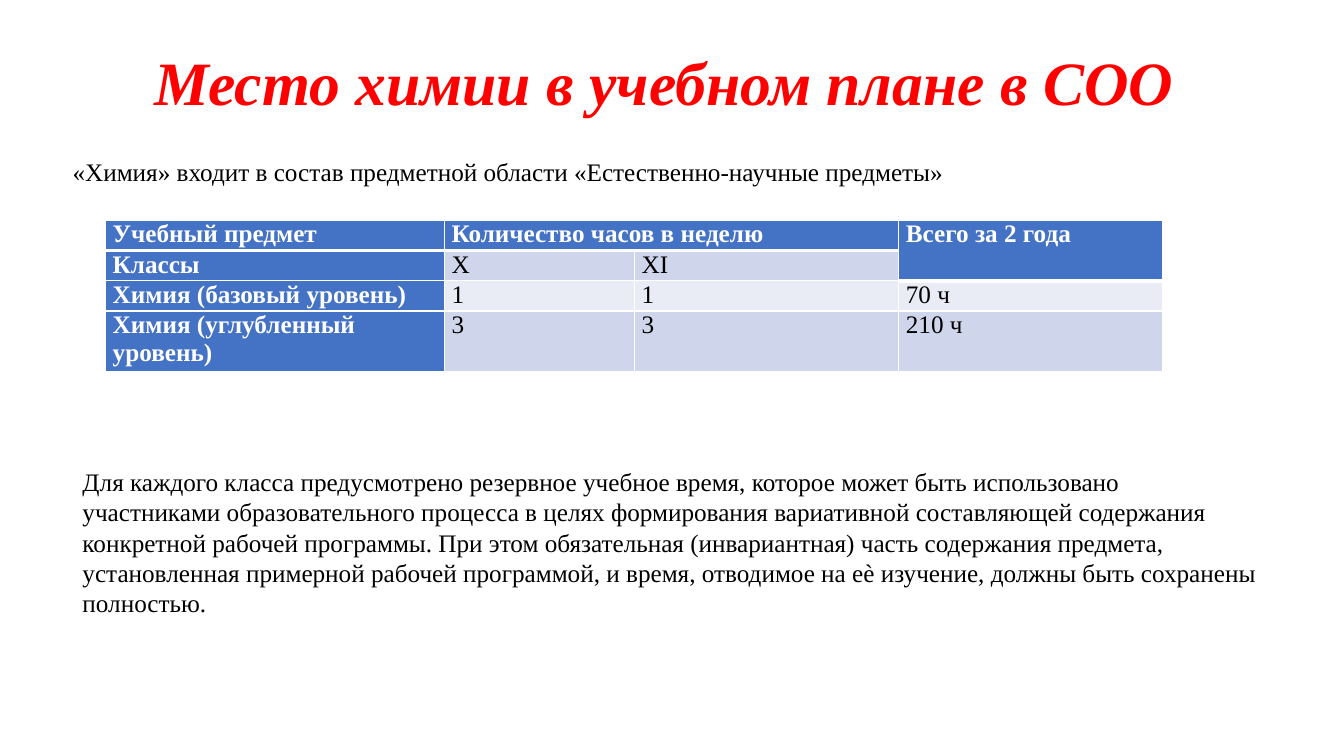
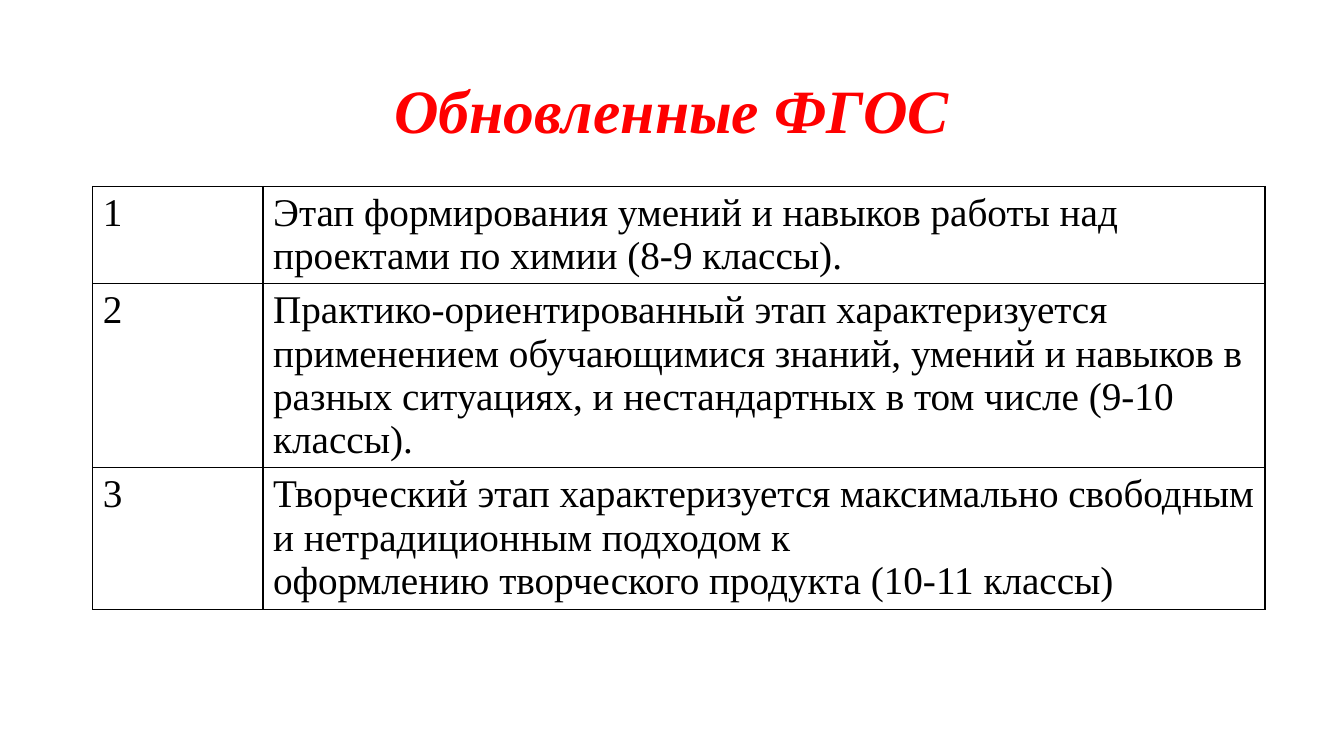
from lxml.etree import SubElement
from pptx import Presentation
from pptx.dml.color import RGBColor
from pptx.enum.text import MSO_ANCHOR, MSO_AUTO_SIZE, PP_ALIGN
from pptx.oxml.ns import qn
from pptx.util import Cm, Pt

RED = RGBColor(0xFF, 0x00, 0x00)
BLACK = RGBColor(0x00, 0x00, 0x00)
WHITE = RGBColor(0xFF, 0xFF, 0xFF)
BLUE = RGBColor(0x44, 0x72, 0xC4)
BANDS = [RGBColor(0xE9, 0xEB, 0xF5), RGBColor(0xCF, 0xD5, 0xEA)]
FONT = "Times New Roman"


def style_text(text_frame, size, color, bold=False, italic=False):
    for paragraph in text_frame.paragraphs:
        paragraph.font.name = FONT
        paragraph.font.size = Pt(size)
        paragraph.font.color.rgb = color
        paragraph.font.bold = bold
        paragraph.font.italic = italic


def set_borders(cell, color, bottom_width=1):
    properties = cell._tc.get_or_add_tcPr()
    widths = {"a:lnL": 1, "a:lnR": 1, "a:lnT": 1, "a:lnB": bottom_width}
    for position, (tag, width) in enumerate(widths.items()):
        line = SubElement(properties, qn(tag), w=str(Pt(width)))
        fill = SubElement(line, qn("a:solidFill"))
        SubElement(fill, qn("a:srgbClr"), val=str(color))
        properties.insert(position, line)


presentation = Presentation()
presentation.slide_width = Cm(33.87)
presentation.slide_height = Cm(19.05)

slides = []
for heading, height in [("Место химии в учебном плане в СОО ", 2.29), ("Обновленные ФГОС", 3.68)]:
    slide = presentation.slides.add_slide(presentation.slide_layouts[5])
    title = slide.shapes.title
    title.left, title.top, title.width, title.height = Cm(2.33), Cm(1.01), Cm(29.21), Cm(height)
    title.text_frame.text = heading
    title.text_frame.vertical_anchor = MSO_ANCHOR.MIDDLE
    title.text_frame.auto_size = MSO_AUTO_SIZE.NONE
    title.text_frame.paragraphs[0].alignment = PP_ALIGN.CENTER
    title.text_frame.paragraphs[0].line_spacing = 0.9
    style_text(title.text_frame, 44, RED, bold=True, italic=True)
    slides.append(slide)
plan_slide, stages_slide = slides

notes = [
    (1.58, 3.81, 23.52, 1.02,
     "«Химия» входит в состав предметной области «Естественно-научные предметы»"),
    (1.83, 11.63, 30.23, 4.11,
     "Для каждого класса предусмотрено резервное учебное время, которое может быть использовано "
     "участниками образовательного процесса в целях формирования вариативной составляющей содержания "
     "конкретной рабочей программы. При этом обязательная (инвариантная) часть содержания предмета, "
     "установленная примерной рабочей программой, и время, отводимое на еѐ изучение, должны быть "
     "сохранены полностью."),
]
for left, top, width, height, text in notes:
    box = plan_slide.shapes.add_textbox(Cm(left), Cm(top), Cm(width), Cm(height))
    box.text_frame.word_wrap = True
    box.text_frame.text = text
    style_text(box.text_frame, 18, BLACK)

hours = [
    ["Учебный предмет", "Количество часов в неделю", "", "Всего за 2 года"],
    ["Классы", "X", "XI", ""],
    ["Химия (базовый уровень)", "1", "1", "70 ч"],
    ["Химия (углубленный уровень)", "3", "3", "210 ч"],
]
hours_table = plan_slide.shapes.add_table(4, 4, Cm(2.66), Cm(5.55), Cm(26.65), Cm(3.8)).table
hours_table.first_row = hours_table.horz_banding = False
for column, width in zip(hours_table.columns, [8.54, 4.79, 6.66, 6.66]):
    column.width = Cm(width)
for row, height in zip(hours_table.rows, [0.76, 0.76, 0.76, 1.52]):
    row.height = Cm(height)
for row_index, texts in enumerate(hours):
    for column_index, text in enumerate(texts):
        cell = hours_table.cell(row_index, column_index)
        is_header = row_index == 0 or column_index == 0
        cell.text = text
        cell.margin_left = cell.margin_right = Cm(0.18)
        cell.margin_top = cell.margin_bottom = 0
        cell.fill.solid()
        cell.fill.fore_color.rgb = BLUE if is_header else BANDS[row_index % 2]
        style_text(cell.text_frame, 18, WHITE if is_header else BLACK, bold=is_header)
        set_borders(cell, WHITE, 3 if row_index == 0 else 1)
hours_table.cell(0, 1).merge(hours_table.cell(0, 2))
hours_table.cell(0, 3).merge(hours_table.cell(1, 3))

stages = [
    (2.45, "Этап формирования умений и навыков работы над проектами по химии (8-9 классы)."),
    (4.64, "Практико-ориентированный этап характеризуется применением обучающимися знаний, умений "
           "и навыков в разных ситуациях, и нестандартных в том числе (9-10 классы)."),
    (3.57, "Творческий этап характеризуется максимально свободным и нетрадиционным подходом к\n"
           "оформлению творческого продукта (10-11 классы)"),
]
stages_table = stages_slide.shapes.add_table(3, 2, Cm(2.34), Cm(4.7), Cm(29.54), Cm(10.66)).table
stages_table.first_row = stages_table.horz_banding = False
stages_table.columns[0].width = Cm(4.29)
stages_table.columns[1].width = Cm(25.25)
for number, (row, (height, text)) in enumerate(zip(stages_table.rows, stages), 1):
    row.height = Cm(height)
    for cell, content in zip(row.cells, [str(number), text]):
        cell.text = content
        cell.fill.background()
        style_text(cell.text_frame, 28, BLACK)
        set_borders(cell, BLACK)

presentation.save("out.pptx")
